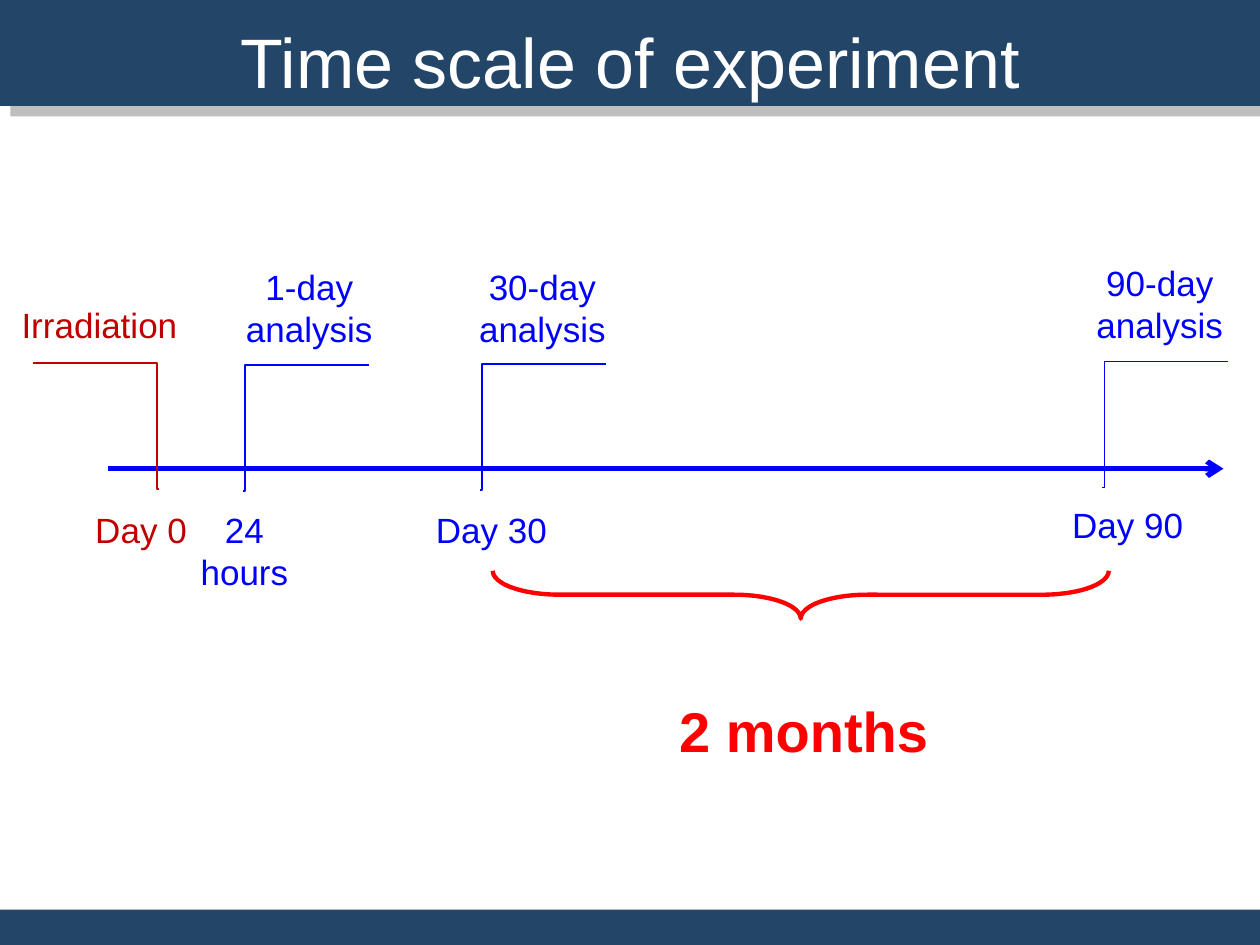
from dataclasses import dataclass

from lxml import etree
from pptx import Presentation
from pptx import util as u
from pptx.dml.color import RGBColor
from pptx.enum import shapes, text
from pptx.oxml.ns import qn

COLUMNS, ROWS = 100, 75
CELL = u.Inches(0.1)


@dataclass(frozen=True)
class Theme:
    font: str = "Arial"
    navy: str = "224568"
    blue: str = "0000FF"
    crimson: str = "C00000"
    red: str = "FF0000"
    white: str = "FFFFFF"
    shadow: str = "808080"
    title_size: int = 40
    label_size: int = 20
    span_size: int = 32


THEME = Theme()


def cells(*counts):
    """Turn grid counts into slide lengths."""
    return [round(count * CELL) for count in counts]


def add_xml(parent, tag, **attributes):
    return etree.SubElement(parent, qn(tag), attributes)


def add_band(page, top, height):
    band = page.shapes.add_shape(
        shapes.MSO_SHAPE.RECTANGLE, *cells(0, top, COLUMNS, height))
    band.shadow.inherit = False
    band.fill.solid()
    band.fill.fore_color.rgb = RGBColor.from_string(THEME.navy)
    band.line.fill.background()
    return band


def cast_shadow(shape):
    """Give the shape a half-transparent shadow to the lower right."""
    effects = shape.element.spPr.find(qn("a:effectLst"))
    shadow = add_xml(effects, "a:outerShdw", dist=str(u.Pt(8.5)),
                     dir="2700000", algn="ctr", rotWithShape="0")
    colour = add_xml(shadow, "a:srgbClr", val=THEME.shadow)
    add_xml(colour, "a:alpha", val="50000")


def add_label(page, lines, place, colour, size=THEME.label_size,
              indent=0.0, bold=False, fit=True):
    box = page.shapes.add_textbox(*cells(*place))
    frame = box.text_frame
    frame.word_wrap = True
    if fit:
        frame.auto_size = text.MSO_AUTO_SIZE.SHAPE_TO_FIT_TEXT
    frame.text = lines
    for para in frame.paragraphs:
        para.alignment = text.PP_ALIGN.CENTER
        if indent:
            para._p.get_or_add_pPr().set("marL", str(u.Inches(indent)))
        for span in para.runs:
            span.font.name = THEME.font
            span.font.size = u.Pt(size)
            span.font.bold = bold
            span.font.color.rgb = RGBColor.from_string(colour)


def add_line(page, kind, start, end, colour, width):
    line = page.shapes.add_connector(kind, *cells(*start, *end))
    line.line.color.rgb = RGBColor.from_string(colour)
    line.line.width = u.Pt(width)
    add_xml(line.element.spPr, "a:effectLst")
    return line


def add_time_axis(page, left, right, row):
    axis = add_line(page, shapes.MSO_CONNECTOR.STRAIGHT,
                    (left, row), (right, row), THEME.blue, 3)
    add_xml(axis.line._get_or_add_ln(), "a:tailEnd", type="arrow")


def add_marker(page, outer, inner, top, colour):
    """Draw a flag line that runs inward, then down across the axis."""
    marker = add_line(page, shapes.MSO_CONNECTOR.ELBOW,
                      (outer, top), (inner, top + 10), colour, 1)
    geometry = marker.element.spPr.find(qn("a:prstGeom"))
    guides = geometry.find(qn("a:avLst"))
    if guides is None:
        guides = add_xml(geometry, "a:avLst")
    add_xml(guides, "a:gd", name="adj1", fmla="val 98400")


def add_brace(page, left, top, width, height):
    """Draw a brace that opens upward over the given area."""
    brace = page.shapes.add_shape(
        shapes.MSO_SHAPE.RIGHT_BRACE,
        *cells(left + (width - height) / 2, top - (width - height) / 2,
               height, width))
    brace.rotation = 90
    brace.adjustments[0] = 1.395
    brace.adjustments[1] = 0.5
    brace.shadow.inherit = False
    brace.fill.background()
    brace.line.color.rgb = RGBColor.from_string(THEME.red)
    brace.line.width = u.Pt(2.5)


def add_events(page):
    # event, its place, time, its place, marker (outer, inner, top), colour
    events = [
        ("Irradiation", (-2.8, 23.6, 20.6, 4.4),
         "Day 0", (0.5, 39.9, 20.6, 4.4), (2.6, 12.6, 28.8), THEME.crimson),
        ("1-day\nanalysis", (12.1, 20.6, 24.1, 7.7),
         "24\nhours", (8.7, 39.9, 20.6, 7.7), (29.3, 19.3, 29), THEME.blue),
        ("30-day\nanalysis", (30.6, 20.6, 24.1, 7.7),
         "Day 30", (28.3, 39.9, 20.6, 4.4), (48.1, 38.1, 28.9), THEME.blue),
        ("90-day\nanalysis", (79.6, 20.3, 24.1, 7.7),
         "Day 90", (78.8, 39.5, 20.6, 4.4), (97.5, 87.5, 28.7), THEME.blue),
    ]
    for event, event_place, time, time_place, marker, colour in events:
        add_marker(page, *marker, colour)
        add_label(page, event, event_place, colour, indent=0.08)
        add_label(page, time, time_place, colour, indent=0.08)


def main():
    deck = Presentation()
    deck.slide_width, deck.slide_height = cells(COLUMNS, ROWS)
    page = deck.slides.add_slide(deck.slide_layouts[6])

    add_band(page, 72.2, 2.8)
    cast_shadow(add_band(page, 0, 8.4))
    add_label(page, "Time scale of experiment", (0, 1, COLUMNS, 7.4),
              THEME.white, THEME.title_size, fit=False)

    add_time_axis(page, 8.6, 97.1, 37.2)
    add_events(page)
    add_brace(page, 39.1, 45.3, 48.9, 3.8)
    add_label(page, "2 months", (52.8, 54.8, 22, 6.4),
              THEME.red, THEME.span_size, bold=True)

    deck.save("out.pptx")


if __name__ == "__main__":
    main()
